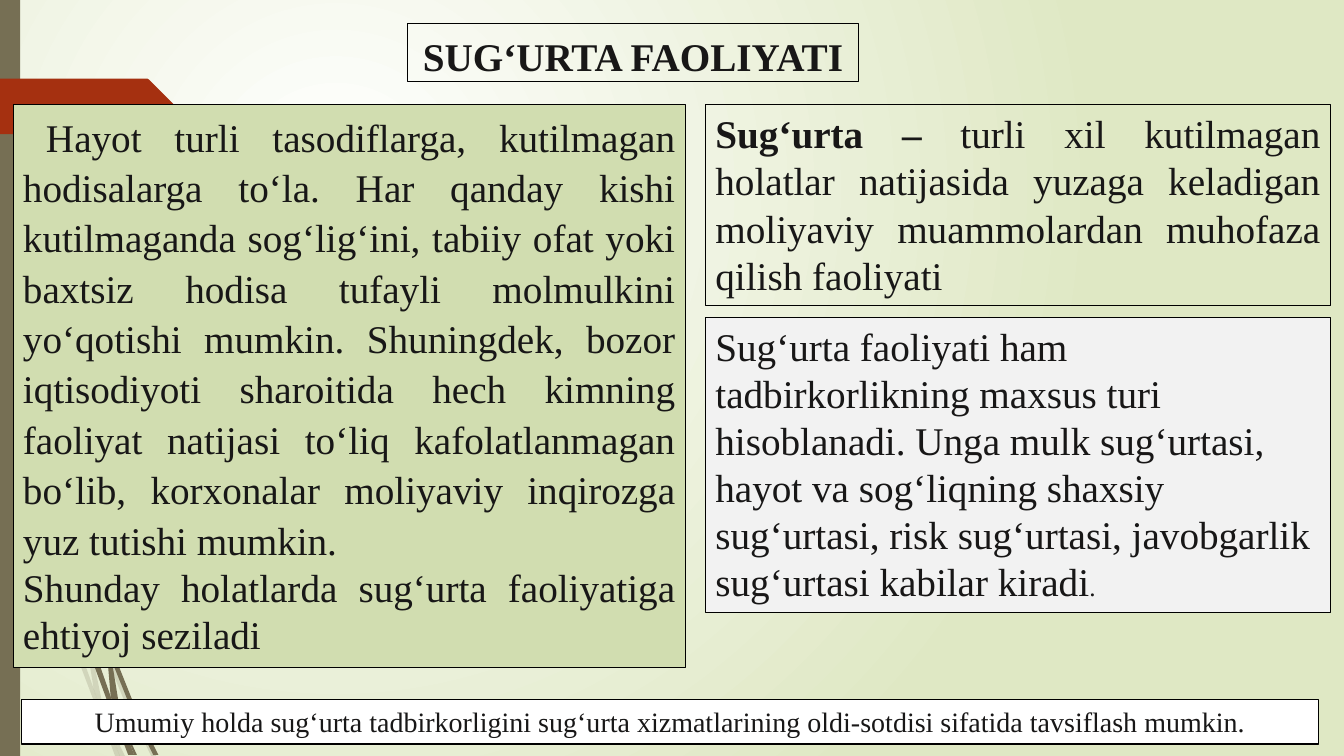
from dataclasses import dataclass

from lxml import etree
from pptx import Presentation
from pptx.dml.color import RGBColor
from pptx.enum.shapes import MSO_SHAPE
from pptx.enum.text import MSO_AUTO_SIZE, PP_ALIGN
from pptx.oxml.ns import qn
from pptx.util import Cm, Pt

RECTANGLE = MSO_SHAPE.RECTANGLE
GROW = MSO_AUTO_SIZE.SHAPE_TO_FIT_TEXT
LEFT, CENTER, JUSTIFY = PP_ALIGN.LEFT, PP_ALIGN.CENTER, PP_ALIGN.JUSTIFY


@dataclass(frozen=True)
class Theme:
    """Colours, font and type sizes of the deck."""
    white: str = "FFFFFF"
    meadow: str = "DFE8C4"
    olive: str = "766F54"
    rust: str = "A53010"
    sage: str = "D1DDB0"
    mist: str = "F2F2F2"
    ink: str = "181717"
    border: str = "000000"
    font: str = "Times New Roman"
    body: float = 28
    note: float = 20
    stop: float = 18
    rule: float = 0.75


@dataclass(frozen=True)
class Box:
    """A region of the page, in centimetres."""
    left: float
    top: float
    width: float
    height: float

    def lengths(self):
        """Return the four measures as lengths."""
        return Cm(self.left), Cm(self.top), Cm(self.width), Cm(self.height)


@dataclass(frozen=True)
class Span:
    """A stretch of text in one format."""
    text: str
    size: float
    bold: bool = False


@dataclass(frozen=True)
class Para:
    """A paragraph and its layout."""
    spans: tuple
    align: int = LEFT
    spacing: float = 1.0
    after: float = 0
    first_line: float = 0


THEME = Theme()
PAGE = Box(0, 0, 33.87, 19.05)

PALE_WISPS = (
    ((2.34, 15.42), (2.24, 15.14), (2.24, 15.49), (3.12, 17.63), (3.81, 19.05),
     (3.94, 19.05), (3.23, 17.58)),
    ((3.02, 19.05), (3.15, 19.05), (2.67, 18.06)),
    ((2.36, 17.35), (1.78, 15.72), (0.79, 11.91), (0.43, 9.55), (0.28, 8.89),
     (0.71, 11.94), (1.65, 15.77), (2.34, 17.6), (2.57, 18.14), (2.51, 17.96)),
    ((2.13, 15.21), (2.21, 16.41), (2.36, 17.35), (2.44, 17.58), (2.67, 18.06),
     (2.62, 17.93), (2.31, 16.41), (2.24, 15.49), (2.24, 15.44)),
    ((2.57, 18.14), (2.9, 19.05), (3.02, 19.05)),
    ((2.44, 17.58), (2.36, 17.35), (2.51, 17.96), (2.57, 18.14), (3.02, 19.05),
     (2.67, 18.06)),
)
DARK_WISPS = (
    ((2.87, 16.48), (2.79, 16.28), (2.82, 16.66), (3.35, 17.98), (3.86, 19.02),
     (3.99, 19.02), (3.45, 17.93)),
    ((2.79, 17.55), (2.49, 16.69), (1.83, 14.12), (1.63, 12.83), (1.45, 12.12),
     (1.73, 14.15), (2.36, 16.74), (2.82, 17.98), (2.97, 18.34), (2.95, 18.21)),
    ((3.38, 19.02), (3.45, 19.02), (3.1, 18.26)),
    ((2.97, 18.34), (3.23, 19.02), (3.33, 19.02)),
    ((2.69, 16.38), (2.79, 17.55), (2.95, 17.93), (3.1, 18.26), (3.07, 18.19),
     (2.82, 16.66), (2.77, 16.54)),
    ((2.95, 17.93), (2.79, 17.55), (2.95, 18.21), (2.97, 18.34), (3.3, 19.02),
     (3.38, 19.02), (3.1, 18.26)),
)
RIBBON = ((0, 0), (3.71, 0), (3.76, 0.03), (4.39, 0.66), (4.42, 0.71),
          (4.39, 0.76), (3.76, 1.4), (3.71, 1.42), (0, 1.4))

TITLE = (Para((Span("SUG‘URTA FAOLIYATI", THEME.body, True),), CENTER, 1.07, 11.2),)
NEED = (
    Para((Span("Hayot turli tasodiflarga, kutilmagan hodisalarga to‘la. Har qanday "
               "kishi kutilmaganda sog‘lig‘ini, tabiiy ofat yoki baxtsiz hodisa "
               "tufayli molmulkini yo‘qotishi mumkin. Shuningdek, bozor "
               "iqtisodiyoti sharoitida hech kimning faoliyat natijasi to‘liq "
               "kafolatlanmagan bo‘lib, korxonalar moliyaviy inqirozga yuz "
               "tutishi mumkin.", THEME.body),), JUSTIFY, 1.07, 0.2, 0.58),
    Para((Span("Shunday holatlarda sug‘urta faoliyatiga ehtiyoj seziladi",
               THEME.body),), JUSTIFY),
)
DEFINITION = (
    Para((Span("Sug‘urta – ", THEME.body, True),
          Span("turli xil kutilmagan holatlar natijasida yuzaga keladigan "
               "moliyaviy muammolardan muhofaza qilish faoliyati", THEME.body)),
         JUSTIFY),
)
KINDS = (
    Para((Span("Sug‘urta faoliyati ham tadbirkorlikning maxsus turi hisoblanadi. "
               "Unga mulk sug‘urtasi, hayot va sog‘liqning shaxsiy sug‘urtasi, "
               "risk sug‘urtasi, javobgarlik sug‘urtasi kabilar kiradi", THEME.body),
          Span(".", THEME.stop))),
)
SUMMARY = (
    Para((Span("Umumiy holda sug‘urta tadbirkorligini sug‘urta xizmatlarining "
               "oldi-sotdisi sifatida tavsiflash mumkin.", THEME.note),), CENTER),
)


def paint(shape, color):
    """Give a shape a plain fill without outline or shadow."""
    shape.shadow.inherit = False
    shape.fill.solid()
    shape.fill.fore_color.rgb = RGBColor.from_string(color)
    shape.line.fill.background()


def add_outline(page, box, points, color, opacity=100):
    """Draw a closed outline whose points are relative to the box."""
    corners = [(Cm(box.left + x), Cm(box.top + y)) for x, y in points]
    builder = page.shapes.build_freeform(*corners[0])
    builder.add_line_segments(corners[1:], close=True)
    shape = builder.convert_to_shape()
    paint(shape, color)
    if opacity < 100:
        tint = next(shape.element.spPr.iter(qn("a:srgbClr")))
        etree.SubElement(tint, qn("a:alpha")).set("val", str(opacity * 1000))


def add_background(page):
    """Fill the page with a radial glow from its upper left."""
    fill = page.background.fill
    fill.gradient()
    for stop, color in zip(fill.gradient_stops, (THEME.white, THEME.meadow)):
        stop.color.rgb = RGBColor.from_string(color)
    gradient = next(page.element.iter(qn("a:gradFill")))
    for linear in gradient.findall(qn("a:lin")):
        gradient.remove(linear)
    glow = etree.SubElement(gradient, qn("a:path"))
    glow.set("path", "circle")
    focus = etree.SubElement(glow, qn("a:fillToRect"))
    for side, share in zip("ltrb", (50, 50, 100, 100)):
        focus.set(side, str(share * 1000))


def add_decoration(page, box):
    """Draw the wisps, side bar and ribbon along the left edge."""
    for wisps, opacity in ((PALE_WISPS, 20), (DARK_WISPS, 100)):
        for wisp in wisps:
            add_outline(page, box, wisp, THEME.olive, opacity)
    bar = Box(box.left, box.top, 0.51, box.height)
    paint(page.shapes.add_shape(RECTANGLE, *bar.lengths()), THEME.olive)
    add_outline(page, Box(box.left, box.top + 1.98, 4.42, 1.42), RIBBON, THEME.rust)


def add_panel(page, box, paras, color=None, wrap=True):
    """Place a bordered text panel in the box."""
    panel = page.shapes.add_textbox(*box.lengths())
    if color:
        panel.fill.solid()
        panel.fill.fore_color.rgb = RGBColor.from_string(color)
    panel.line.color.rgb = RGBColor.from_string(THEME.border)
    panel.line.width = Pt(THEME.rule)
    frame = panel.text_frame
    frame.word_wrap = wrap
    frame.auto_size = GROW
    for index, para in enumerate(paras):
        paragraph = frame.add_paragraph() if index else frame.paragraphs[0]
        paragraph.alignment = para.align
        paragraph.line_spacing = para.spacing
        paragraph.space_after = Pt(para.after)
        if para.first_line:
            paragraph._p.get_or_add_pPr().set("indent", str(Cm(para.first_line)))
        for span in para.spans:
            run = paragraph.add_run()
            run.text = span.text
            run.font.name = THEME.font
            run.font.size = Pt(span.size)
            run.font.bold = span.bold
            run.font.color.rgb = RGBColor.from_string(THEME.ink)


def add_insurance_page(deck, box):
    """Build the page on insurance activity."""
    page = deck.slides.add_slide(deck.slide_layouts[6])
    add_background(page)
    add_decoration(page, box)
    add_panel(page, Box(10.26, 0.6, 11.38, 1.45), TITLE, wrap=False)
    add_panel(page, Box(0.33, 2.64, 16.94, 14.17), NEED, THEME.sage)
    add_panel(page, Box(17.78, 2.64, 15.75, 5.05), DEFINITION)
    add_panel(page, Box(17.78, 8, 15.75, 7.44), KINDS, THEME.mist)
    add_panel(page, Box(0.55, 17.63, 32.69, 1.12), SUMMARY, THEME.white)


def main():
    """Create and save the deck."""
    deck = Presentation()
    deck.slide_width, deck.slide_height = Cm(PAGE.width), Cm(PAGE.height)
    add_insurance_page(deck, PAGE)
    deck.save("out.pptx")


if __name__ == "__main__":
    main()
